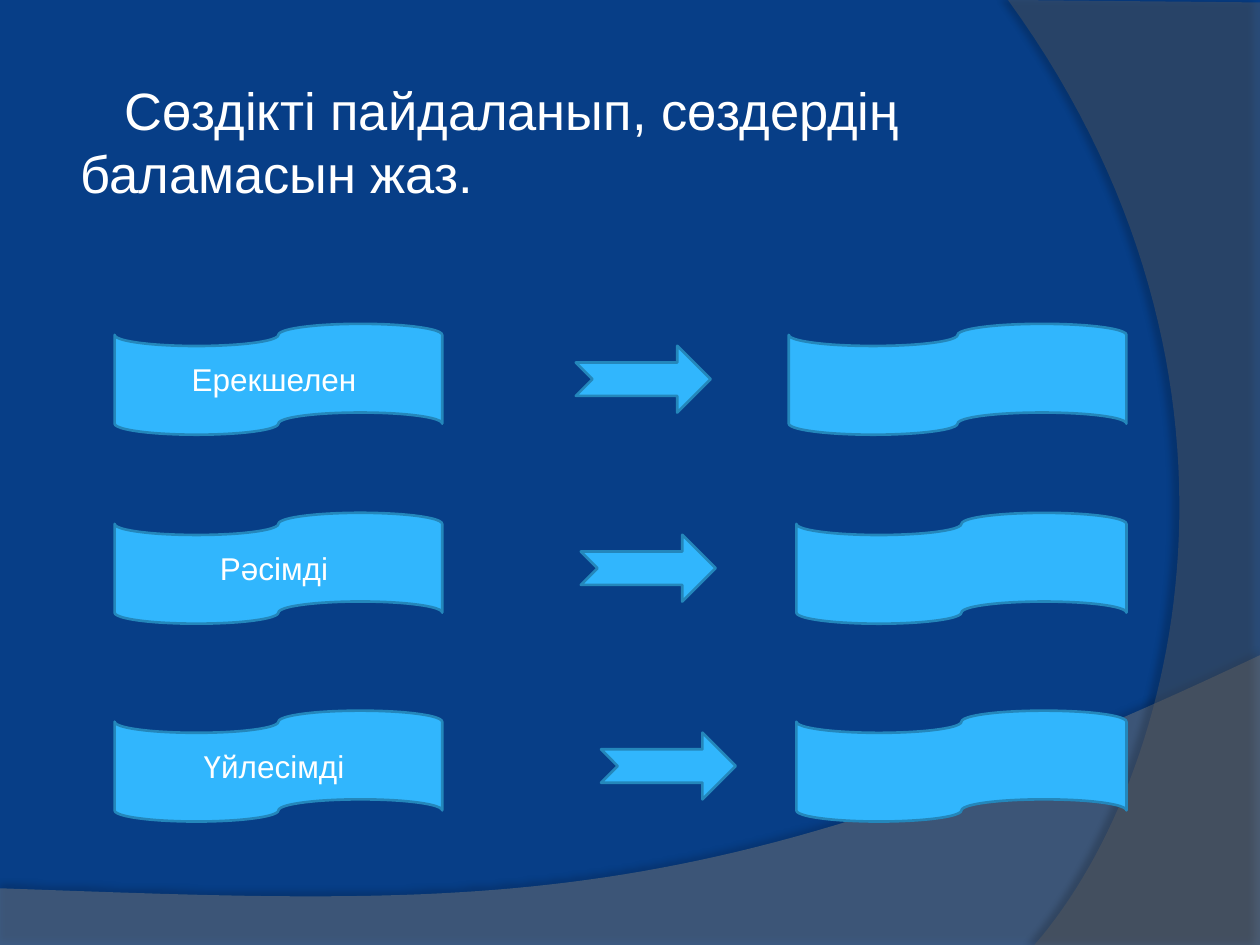
from dataclasses import dataclass

from lxml.etree import SubElement
from pptx import Presentation
from pptx.dml.color import RGBColor
from pptx.enum.shapes import MSO_SHAPE as Preset
from pptx.enum.text import MSO_ANCHOR as Anchor, PP_ALIGN as Align
from pptx.oxml.ns import qn
from pptx.util import Inches, Pt


@dataclass(frozen=True)
class Theme:
    font: str = "Arial"
    background: str = "073E87"
    ribbon: str = "31B6FD"
    outline: str = "2487BB"
    text: str = "FFFFFF"
    lower_wave: str = "7F7F7F"
    side_wave: str = "5E5E5E"
    shadow: str = "000000"
    task_size: int = 30
    word_size: int = 18
    outline_width: float = 1.5


THEME = Theme()


def paint(fill, color):
    fill.solid()
    fill.fore_color.rgb = RGBColor.from_string(color)


def add_run(paragraph, wording, size):
    run = paragraph.add_run()
    run.text = wording
    run.font.name = THEME.font
    run.font.size = Pt(size)
    run.font.color.rgb = RGBColor.from_string(THEME.text)


def bezier(start, control_1, control_2, end, steps=60):
    points = []
    for step in range(1, steps + 1):
        t = step / steps
        weights = ((1 - t) ** 3, 3 * t * (1 - t) ** 2, 3 * t**2 * (1 - t), t**3)
        points.append(tuple(
            sum(weight * value for weight, value in zip(weights, axis))
            for axis in zip(start, control_1, control_2, end)
        ))
    return points


def set_alpha(color_element, percent):
    SubElement(color_element, qn("a:alpha"), val=str(percent * 1000))


def add_wave(slide, outline, color, opacity, shadow_opacity, distance, direction):
    start, *rest = [(Inches(x), Inches(y)) for x, y in outline]
    builder = slide.shapes.build_freeform(*start)
    builder.add_line_segments(rest, close=True)
    wave = builder.convert_to_shape()
    paint(wave.fill, color)
    wave.line.fill.background()
    wave.shadow.inherit = False
    properties = wave.element.spPr
    set_alpha(properties.find(f"{qn('a:solidFill')}/{qn('a:srgbClr')}"), opacity)
    shadow = SubElement(
        properties.find(qn("a:effectLst")), qn("a:outerShdw"),
        blurRad=str(Pt(4)), dist=str(Pt(distance)),
        dir=str(direction * 60000), algn="ctr", rotWithShape="0",
    )
    set_alpha(SubElement(shadow, qn("a:srgbClr"), val=THEME.shadow), shadow_opacity)


def add_task(slide, wording):
    task = slide.shapes.add_textbox(Inches(0.5), Inches(0.52), Inches(8.99), Inches(6.46))
    frame = task.text_frame
    frame.word_wrap = True
    frame.margin_top = Inches(0.1)
    frame.margin_right = Inches(0.2)
    paragraph = frame.paragraphs[0]
    properties = paragraph._p.get_or_add_pPr()
    properties.set("marL", str(Inches(0.04)))
    properties.set("indent", str(Inches(0.35)))
    add_run(paragraph, wording, THEME.task_size)


def add_figure(slide, preset, left, top, width, height, wording=""):
    figure = slide.shapes.add_shape(
        preset, Inches(left), Inches(top), Inches(width), Inches(height)
    )
    figure.shadow.inherit = False
    paint(figure.fill, THEME.ribbon)
    paint(figure.line.fill, THEME.outline)
    figure.line.width = Pt(THEME.outline_width)
    if wording:
        figure.text_frame.vertical_anchor = Anchor.MIDDLE
        paragraph = figure.text_frame.paragraphs[0]
        paragraph.alignment = Align.CENTER
        add_run(paragraph, wording, THEME.word_size)


def add_word_row(slide, word, top, arrow_left, answer_left):
    ribbon_height, arrow_height, answer_right = 0.88, 0.53, 8.94
    arrow_top = top + (ribbon_height - arrow_height) / 2
    add_figure(slide, Preset.FLOWCHART_PUNCHED_TAPE, 0.91, top, 2.6, ribbon_height, word)
    add_figure(slide, Preset.NOTCHED_RIGHT_ARROW, arrow_left, arrow_top, 1.07, arrow_height)
    add_figure(slide, Preset.FLOWCHART_PUNCHED_TAPE, answer_left, top,
               answer_right - answer_left, ribbon_height)


def main():
    deck = Presentation()
    deck.slide_width, deck.slide_height = Inches(10), Inches(7.5)
    slide = deck.slides.add_slide(deck.slide_layouts[6])
    paint(slide.background.fill, THEME.background)

    lower_edge = bezier((10, 5.2), (5.59, 7.29), (3.91, 7.19), (0, 7.05))
    side_edge = bezier((8.21, 7.5), (9.35, 6.19), (10.18, 3), (8, 0))
    add_wave(slide, [(0, 7.51), (10, 7.51), (10, 5.2), *lower_edge],
             THEME.lower_wave, 45, 35, 3.5, 270)
    add_wave(slide, [(10, 0.02), (10, 7.5), (8.21, 7.5), *side_edge],
             THEME.side_wave, 40, 45, 4, 180)

    add_task(slide, "Сөздікті пайдаланып, сөздердің баламасын жаз.")
    for word, top, arrow_left, answer_left in (
        ("Ерекшелен ", 2.57, 4.57, 6.26),
        ("Рәсімді ", 4.07, 4.61, 6.32),
        ("Үйлесімді ", 5.64, 4.77, 6.32),
    ):
        add_word_row(slide, word, top, arrow_left, answer_left)
    deck.save("out.pptx")


if __name__ == "__main__":
    main()
